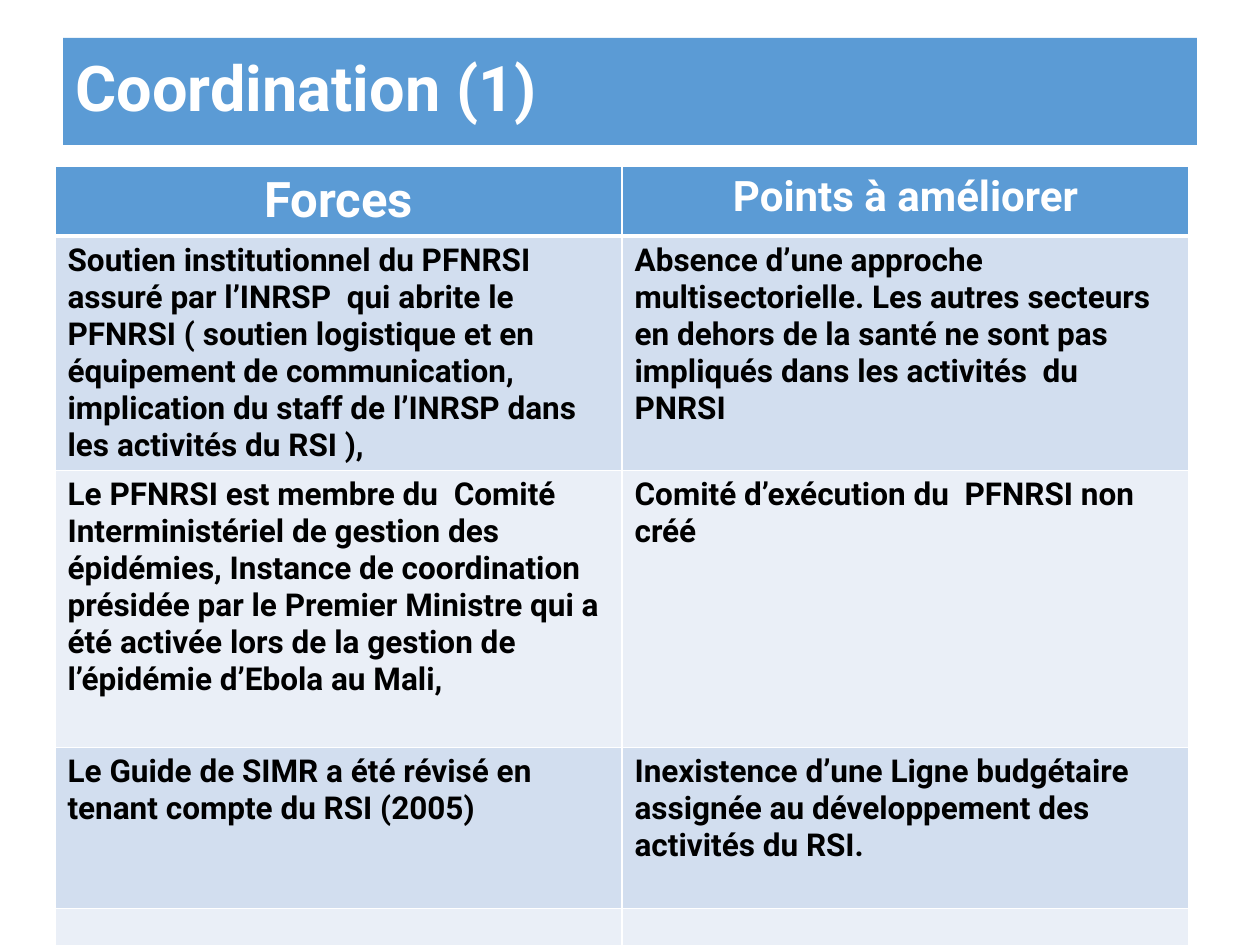
from lxml.etree import SubElement
from pptx import Presentation
from pptx.dml.color import RGBColor
from pptx.enum.text import MSO_ANCHOR as ANCHOR, MSO_AUTO_SIZE as AUTO, PP_ALIGN as ALIGN
from pptx.oxml.ns import qn
from pptx.util import Emu, Pt

FONT = "Roboto"
COLORS = {"accent": "5B9BD5", "band": "D2DEEF", "pale": "EAEFF7",
          "white": "FFFFFF", "black": "000000"}
HEADERS = [("Forces", 28), ("Points à améliorer", 24)]
ROWS = [
    ("Soutien institutionnel du PFNRSI assuré par l’INRSP  qui abrite le PFNRSI "
     "( soutien logistique et en équipement de communication, implication du staff "
     "de l’INRSP dans les activités du RSI ),",
     "Absence d’une approche multisectorielle. Les autres secteurs en dehors de la "
     "santé ne sont pas impliqués dans les activités  du PNRSI"),
    ("Le PFNRSI est membre du  Comité Interministériel de gestion des épidémies, "
     "Instance de coordination présidée par le Premier Ministre qui a été activée "
     "lors de la gestion de l’épidémie d’Ebola au Mali,",
     "Comité d’exécution du  PFNRSI non créé"),
    ("Le Guide de SIMR a été révisé en tenant compte du RSI (2005)",
     "Inexistence d’une Ligne budgétaire assignée au développement des activités du RSI."),
    ("", ""),
]
ROW_HEIGHTS = [69, 234, 277, 161, 91]


def px(n):
    return Emu(round(n * 914400 / 126))


def rgb(name):
    return RGBColor.from_string(COLORS[name])


def add_run(p, text, size, color):
    r = p.add_run()
    r.text = text
    r.font.name = FONT
    r.font.size = Pt(size)
    r.font.bold = True
    r.font.color.rgb = rgb(color)


def add_title(s, text):
    sp = s.shapes.title
    sp.left, sp.top, sp.width, sp.height = px(63), px(38), px(1134), px(107)
    sp.fill.solid()
    sp.fill.fore_color.rgb = rgb("accent")
    tf = sp.text_frame
    tf.auto_size = AUTO.NONE
    tf.vertical_anchor = ANCHOR.MIDDLE
    p = tf.paragraphs[0]
    p.alignment = ALIGN.LEFT
    p.line_spacing = 0.9
    add_run(p, text, 36, "white")


def set_borders(cell, top, bottom):
    tc_pr = cell._tc.get_or_add_tcPr()
    sides = [("a:lnL", 1), ("a:lnR", 1), ("a:lnT", top), ("a:lnB", bottom)]
    for i, (tag, width) in enumerate(sides):
        ln = SubElement(tc_pr, qn(tag), w=str(Pt(width)))
        fill = SubElement(ln, qn("a:solidFill"))
        SubElement(fill, qn("a:srgbClr"), val=COLORS["white"])
        tc_pr.insert(i, ln)


def fill_cell(cell, text, size, color, fill, align, top=1, bottom=1):
    cell.fill.solid()
    cell.fill.fore_color.rgb = rgb(fill)
    set_borders(cell, top, bottom)
    p = cell.text_frame.paragraphs[0]
    p.alignment = align
    if text:
        add_run(p, text, size, color)


def add_comparison(s):
    frame = s.shapes.add_table(len(ROW_HEIGHTS), len(HEADERS), px(55), px(166),
                               px(1134), px(sum(ROW_HEIGHTS)))
    table = frame.table
    table.horz_banding = False
    for row, height in zip(table.rows, ROW_HEIGHTS):
        row.height = px(height)
    for col, (text, size) in enumerate(HEADERS):
        fill_cell(table.cell(0, col), text, size, "white", "accent",
                  ALIGN.CENTER, bottom=3)
    for i, texts in enumerate(ROWS, 1):
        for col, text in enumerate(texts):
            fill_cell(table.cell(i, col), text, 18, "black",
                      "band" if i % 2 else "pale", ALIGN.LEFT, top=3 if i == 1 else 1)


def main():
    prs = Presentation()
    prs.slide_width, prs.slide_height = px(1260), px(945)
    s = prs.slides.add_slide(prs.slide_layouts[5])
    add_title(s, "Coordination (1)")
    add_comparison(s)
    prs.save("out.pptx")


if __name__ == "__main__":
    main()
